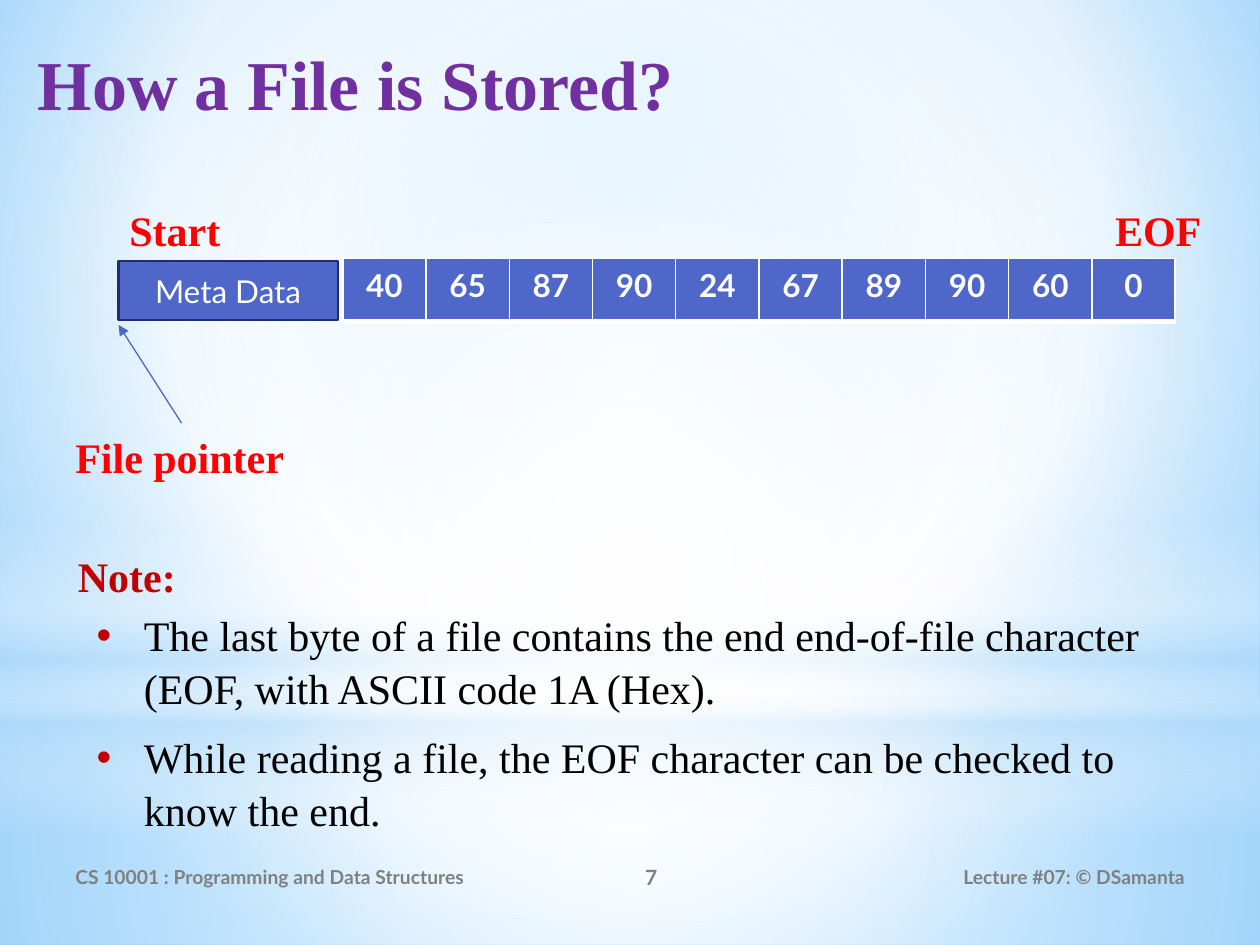
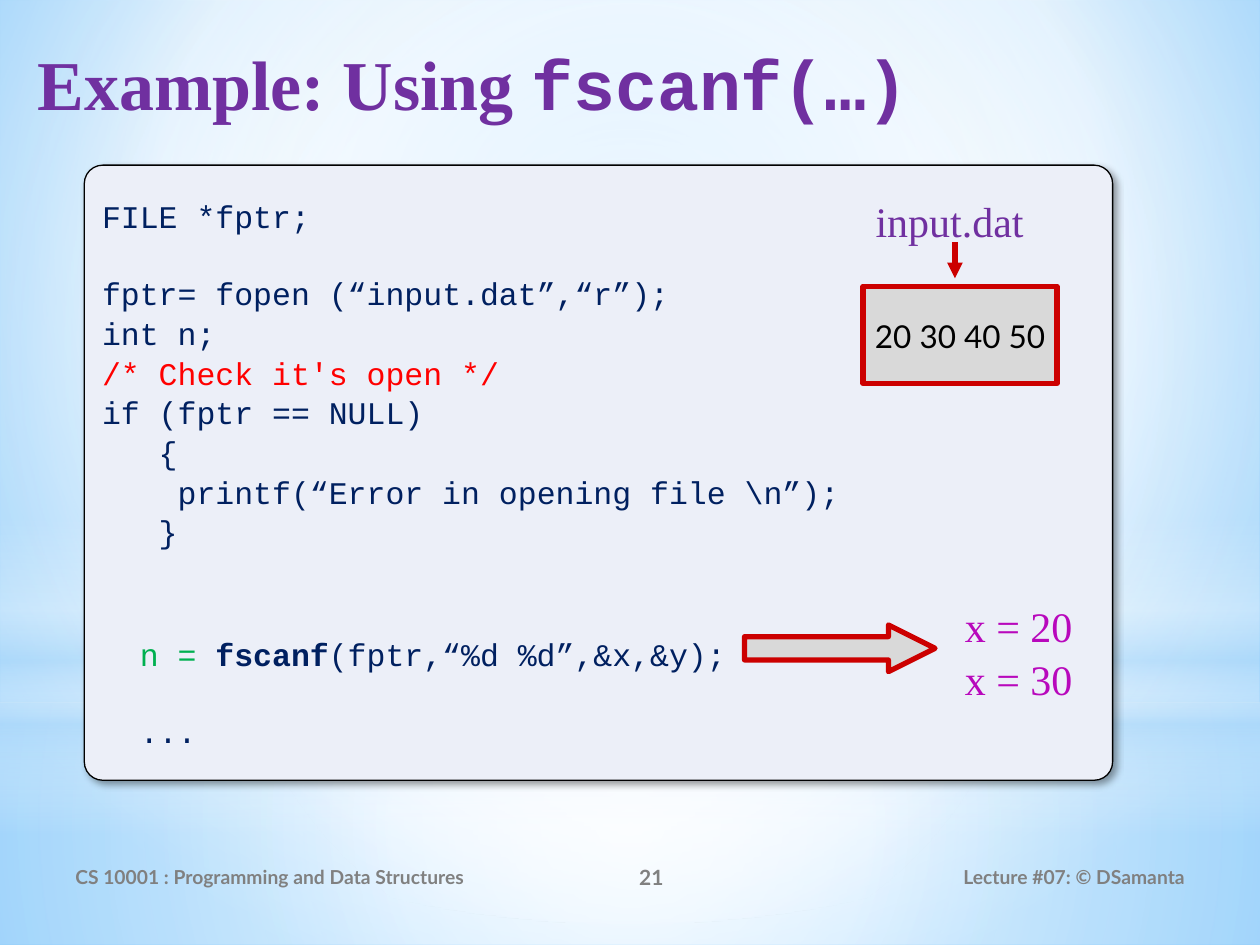
from lxml import etree
from pptx import Presentation
from pptx.dml.color import RGBColor
from pptx.enum.shapes import MSO_CONNECTOR as Connector, MSO_SHAPE as Preset
from pptx.enum.text import MSO_ANCHOR as Anchor, MSO_AUTO_SIZE as AutoSize, PP_ALIGN as Align
from pptx.oxml import parse_xml
from pptx.oxml.ns import nsdecls, qn
from pptx.util import Cm, Pt

WHITE = RGBColor(0xFF, 0xFF, 0xFF)
BLACK = RGBColor(0, 0, 0)
PURPLE = RGBColor(0x70, 0x30, 0xA0)
MAGENTA = RGBColor(0xB8, 0x08, 0xBC)
RED = RGBColor(0xFF, 0, 0)
DARK_RED = RGBColor(0xC0, 0, 0)
OUTLINE_RED = RGBColor(0xCC, 0, 0)
BLUE = RGBColor(0x4E, 0x67, 0xC8)
DARK_BLUE = RGBColor(0x1F, 0x2E, 0x69)
NAVY = RGBColor(0, 0x20, 0x60)
GREEN = RGBColor(0, 0xB0, 0x50)
GREY = RGBColor(0x80, 0x80, 0x80)
LIGHT_GREY = RGBColor(0xD9, 0xD9, 0xD9)
PANEL = RGBColor(0xEC, 0xEF, 0xF8)

SERIF, SANS, MONO = "Times New Roman", "Lato", "Courier New"
LINE_SPACING = 1.05
CODE_SIZE = 18
CODE_CHAR = Pt(0.6 * CODE_SIZE)  # advance of one monospaced letter

# Backdrop glows: preset, place, gradient stops (percent, colour, opacity), focus or angle
CENTRE = (50, 50, 50, 50)
GLOWS = [
    (Preset.RECTANGLE, (0, 14.17, 25.4, 4.88),
     [(0, "FFFFFF", 91), (37, "FFFFFF", 76), (100, "B4DCFA", 79)], CENTRE),
    (Preset.RECTANGLE, (0, 0, 25.4, 14.17),
     [(0, "FFFFFF", 89), (48, "FFFFFF", 62), (100, "B4DCFA", 79)], CENTRE),
    (Preset.RECTANGLE, (0, 10.46, 25.4, 6.35),
     [(0, "FFFFFF", 0), (29, "FFFFFF", 30), (45, "B4DCFA", 40),
      (55, "FFFFFF", 26), (65, "B4DCFA", 60), (100, "FFFFFF", 0)], 90),
    (Preset.OVAL, (0, 4.45, 25.4, 14.17),
     [(0, "FFFFFF", 100), (56, "FFFFFF", 0)], CENTRE),
]
SKY = [(0, "9ED5FF", 100), (60, "FFFFFF", 100), (100, "5BB9FF", 100)]

FILE_BYTES = [40, 65, 87, 90, 24, 67, 89, 90, 60, 0]
NOTES = [
    "The last byte of a file contains the end end-of-file character (EOF, with ASCII code 1A (Hex).",
    "While reading a file, the EOF character can be checked to know the end.",
]
# Code lines: indent in letters, points above, spans (text, colour, bold)
CODE = [
    (0, 0, [("FILE *fptr;", NAVY, False)]),
    (0, 21.4, [("fptr= fopen (“input.dat”,“r”);", NAVY, False)]),
    (0, 0, [("int n;", NAVY, False)]),
    (0, 0, [("/* Check it's open */", RED, False)]),
    (0, 0, [("if (fptr == NULL)", NAVY, False)]),
    (3, 0, [("{", NAVY, False)]),
    (4, 0, [(r"printf(“Error in opening file \n”);", NAVY, False)]),
    (3, 0, [("}", NAVY, False)]),
    (2, 47.6, [("n = ", GREEN, False), ("fscanf", NAVY, True),
               ("(fptr,“%d %d”,&x,&y);", NAVY, False)]),
    (2, 21.4, [("...", NAVY, False)]),
]


def place(lengths):
    return [Cm(length) for length in lengths]


def set_gradient(owner, fill, stops, direction):
    """Fill with a linear gradient (angle) or a circular one (focus insets)."""
    fill.solid()
    marks = "".join(
        f'<a:gs pos="{pos * 1000}"><a:srgbClr val="{colour}">'
        f'<a:alpha val="{opacity * 1000}"/></a:srgbClr></a:gs>'
        for pos, colour, opacity in stops)
    if isinstance(direction, tuple):
        left, top, right, bottom = (inset * 1000 for inset in direction)
        course = (f'<a:path path="circle"><a:fillToRect l="{left}" t="{top}" '
                  f'r="{right}" b="{bottom}"/></a:path>')
    else:
        course = f'<a:lin ang="{direction * 60000}" scaled="0"/>'
    solid = next(owner.iter(qn("a:solidFill")))
    solid.getparent().replace(solid, parse_xml(
        f'<a:gradFill {nsdecls("a")} rotWithShape="1">'
        f'<a:gsLst>{marks}</a:gsLst>{course}</a:gradFill>'))


def style(font, size=None, name=None, colour=None, bold=None):
    if size:
        font.size = Pt(size)
    if name:
        font.name = name
    if colour is not None:
        font.color.rgb = colour
    font.bold = bold


def write(frame, lines, size, name, colour, bold=False, align=Align.LEFT):
    """Put one paragraph per line in the frame, all in one style."""
    for index, line in enumerate(lines):
        para = frame.paragraphs[0] if index == 0 else frame.add_paragraph()
        para.text = line
        para.alignment = align
        para.line_spacing = LINE_SPACING
        style(para.font, size, name, colour, bold)


def add_text(page, at, lines, size, name, colour, bold=False, align=Align.LEFT,
             anchor=Anchor.TOP, wrap=True):
    box = page.shapes.add_textbox(*place(at))
    frame = box.text_frame
    frame.word_wrap = wrap
    frame.vertical_anchor = anchor
    if not wrap:
        frame.auto_size = AutoSize.SHAPE_TO_FIT_TEXT
    write(frame, lines, size, name, colour, bold, align)
    return box


def add_label(page, at, *lines, colour=RED, bold=True):
    return add_text(page, at, lines, 24, SERIF, colour, bold, wrap=False)


def add_block(page, preset, at, fill, line, width):
    block = page.shapes.add_shape(preset, *place(at))
    block.shadow.inherit = False
    block.fill.solid()
    block.fill.fore_color.rgb = fill
    block.line.color.rgb = line
    block.line.width = Pt(width)
    block.text_frame.vertical_anchor = Anchor.MIDDLE
    return block


def add_arrow(page, ends, colour, width):
    arrow = page.shapes.add_connector(Connector.STRAIGHT, *place(ends))
    arrow.line.color.rgb = colour
    arrow.line.width = Pt(width)
    outline = arrow._element.spPr.find(qn("a:ln"))
    etree.SubElement(outline, qn("a:tailEnd"), type="triangle")
    etree.SubElement(arrow._element.spPr, qn("a:effectLst"))


def add_bullets(page, at, lines):
    frame = add_text(page, at, lines, 24, SERIF, BLACK).text_frame
    hang = Cm(0.95)
    for index, para in enumerate(frame.paragraphs):
        para.space_before = Pt(9 if index else 0)
        props = para._p.get_or_add_pPr()
        props.set("marL", str(hang))
        props.set("indent", str(-hang))
        tint = etree.SubElement(props, qn("a:buClr"))
        etree.SubElement(tint, qn("a:srgbClr"), val=str(DARK_RED))
        etree.SubElement(props, qn("a:buFont"), typeface="Arial")
        etree.SubElement(props, qn("a:buChar"), char="•")
        # Bullet marks stand before the default run style
        for late in props.findall(qn("a:defRPr")):
            props.append(late)


def add_byte_table(page, at, values):
    table = page.shapes.add_table(1, len(values), *place(at)).table
    for column, value in enumerate(values):
        table.columns[column].width = Cm(at[2] / len(values))
        cell = table.cell(0, column)
        write(cell.text_frame, [str(value)], 18, SANS, WHITE, True, Align.CENTER)
        props = cell._tc.get_or_add_tcPr()
        for side, width in (("L", 1), ("R", 1), ("T", 1), ("B", 3)):
            border = etree.SubElement(props, qn(f"a:ln{side}"), w=str(Pt(width)))
            solid = etree.SubElement(border, qn("a:solidFill"))
            etree.SubElement(solid, qn("a:srgbClr"), val=str(WHITE))
        cell.fill.solid()
        cell.fill.fore_color.rgb = BLUE


def add_code_panel(page, at, code):
    panel = add_block(page, Preset.ROUNDED_RECTANGLE, at, PANEL, BLACK, 0.75)
    panel.adjustments[0] = 0.03
    effects = panel._element.spPr.find(qn("a:effectLst"))
    effects.append(parse_xml(
        f'<a:outerShdw {nsdecls("a")} blurRad="{Pt(4)}" dist="{Pt(3)}" dir="2700000" '
        'algn="tl" rotWithShape="0"><a:srgbClr val="000000"><a:alpha val="40000"/>'
        '</a:srgbClr></a:outerShdw>'))
    frame = panel.text_frame
    frame.word_wrap = True
    for index, (indent, gap, spans) in enumerate(code):
        para = frame.paragraphs[0] if index == 0 else frame.add_paragraph()
        para.alignment = Align.LEFT
        para.line_spacing = LINE_SPACING
        para.space_before = Pt(gap)
        para._p.get_or_add_pPr().set("marL", str(indent * CODE_CHAR))
        for text, colour, bold in spans:
            span = para.add_run()
            span.text = text
            style(span.font, CODE_SIZE, MONO, colour, bold)


def add_footer(page, left, width, text, size, align):
    add_text(page, (left, 17.15, width, 1.02), [text], size, SANS, GREY, True,
             align, Anchor.MIDDLE)


def decorate_layout(layout, page):
    """Draw the backdrop and the fixed footers, then move them to the layout."""
    set_gradient(layout._element, layout.background.fill, SKY, (20, 10, 20, 60))
    for preset, at, stops, direction in GLOWS:
        glow = page.shapes.add_shape(preset, *place(at))
        glow.shadow.inherit = False
        glow.line.fill.background()
        set_gradient(glow._element, glow.fill, stops, direction)
    add_footer(page, 1.27, 9.32, "CS 10001 : Programming and Data Structures", 11, Align.LEFT)
    add_footer(page, 17.15, 6.99, "Lecture #07: © DSamanta", 11, Align.RIGHT)
    for shape in list(page.shapes):
        layout.shapes._spTree.append(shape._element)


def add_heading(page, number, title, code=""):
    box = add_text(page, (0.51, 0.53, 24.21, 2.79), [title], 40, SERIF, PURPLE, True)
    para = box.text_frame.paragraphs[0]
    para.line_spacing = 1.1
    if code:
        span = para.add_run()
        span.text = code
        span.font.name = MONO
    add_footer(page, 10.59, 5.08, str(number), 12, Align.CENTER)


def fill_storage_page(page):
    add_heading(page, 7, "How a File is Stored?")
    # File layout: metadata block followed by its bytes
    add_byte_table(page, (6.91, 5.21, 16.79, 1.27), FILE_BYTES)
    add_label(page, (2.36, 3.94, 3, 1.3), "Start")
    add_label(page, (22.23, 3.94, 2.26, 1.27), "EOF")
    add_label(page, (1.27, 8.53, 4.75, 1.27), "File pointer")
    meta = add_block(page, Preset.RECTANGLE, (2.39, 5.26, 4.42, 1.19), BLUE, DARK_BLUE, 1.25)
    write(meta.text_frame, ["Meta Data"], 18, SANS, WHITE, align=Align.CENTER)
    add_arrow(page, (3.66, 8.53, 2.39, 6.55), BLUE, 0.75)
    # Note
    add_bullets(page, (1.7, 12.12, 22.56, 4.7), NOTES)
    add_label(page, (1.32, 10.92, 2.51, 1.27), "Note:", colour=DARK_RED)


def fill_fscanf_page(page):
    add_heading(page, 21, "Example: Using ", "fscanf(…)")
    add_code_panel(page, (1.7, 3.33, 20.73, 12.4), CODE)
    # Input file
    data = add_block(page, Preset.RECTANGLE, (17.4, 5.77, 3.91, 1.96), LIGHT_GREY, OUTLINE_RED, 3)
    data.text_frame.word_wrap = False
    write(data.text_frame, ["20 30 40 50"], 18, SANS, BLACK, align=Align.CENTER)
    add_label(page, (17.4, 3.76, 3.53, 1.3), "input.dat", colour=PURPLE, bold=False)
    add_arrow(page, (19.25, 4.88, 19.25, 5.61), OUTLINE_RED, 3)
    # Values read
    add_label(page, (19.2, 11.94, 2.69, 2.31), "x = 20", "x = 30", colour=MAGENTA, bold=False)
    pointer = add_block(page, Preset.RIGHT_ARROW, (15.01, 12.6, 3.84, 0.94),
                        LIGHT_GREY, OUTLINE_RED, 3)
    pointer.adjustments[1] = 1


def main():
    deck = Presentation()
    deck.slide_width, deck.slide_height = Cm(25.4), Cm(19.05)
    blank = deck.slide_layouts[6]
    storage_page, fscanf_page = (deck.slides.add_slide(blank) for _ in range(2))
    decorate_layout(blank, storage_page)
    fill_storage_page(storage_page)
    fill_fscanf_page(fscanf_page)
    deck.save("out.pptx")


if __name__ == "__main__":
    main()
